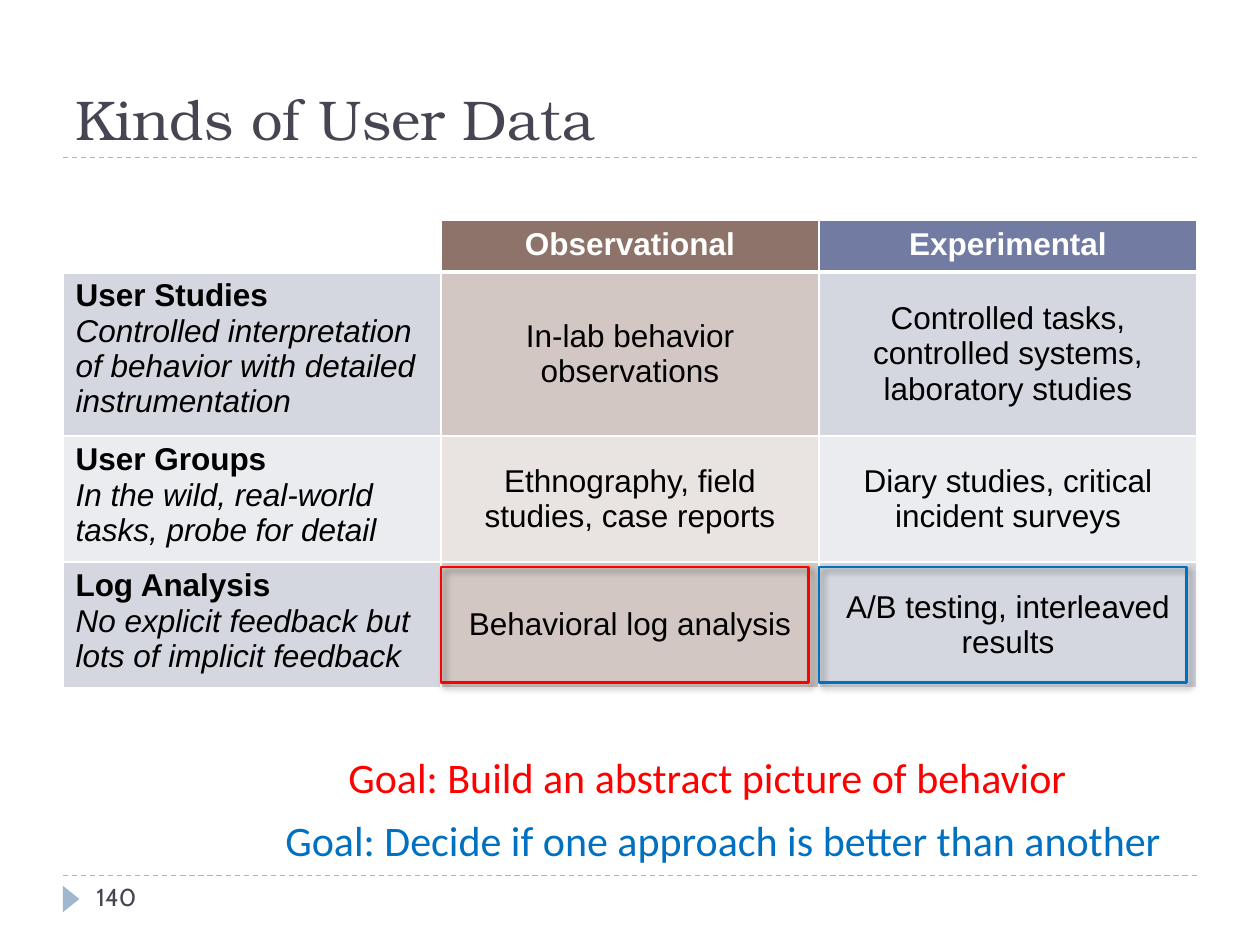
from lxml import etree
from pptx import Presentation
from pptx.dml.color import RGBColor
from pptx.enum import dml, shapes, text
from pptx.oxml import ns
from pptx.util import Pt

COLORS = {
    "ink": "464653", "rule": "9FB8CD", "white": "FFFFFF", "black": "000000",
    "red": "FF0000", "blue": "0070C0", "brown": "8E736A", "slate": "727CA3",
    "brown mid": "D2C7C3", "slate mid": "D5D7E0",
    "brown pale": "E9E3E1", "slate pale": "EBECF0",
}
TITLE = "Kinds of User Data"
PAGE_NUMBER = "140"
HEADERS = [("Observational", "brown"), ("Experimental", "slate")]
# name, description, observational, experimental, tint, height
ROWS = [
    ("User Studies", "Controlled interpretation of behavior with detailed instrumentation",
     "In-lab behavior observations",
     "Controlled tasks, controlled systems, laboratory studies", "mid", 93.6),
    ("User Groups", "In the wild, real-world tasks, probe for detail",
     "Ethnography, field studies, case reports",
     "Diary studies, critical incident surveys", "pale", 72),
    ("Log Analysis", "No explicit feedback but lots of implicit feedback",
     "Behavioral log analysis", "A/B testing, interleaved results", "mid", 72),
]
# goal, color, text box (left, top, width), left of its highlight
GOALS = [
    ("Goal: Build an abstract picture of behavior", "red", (192, 426, 432), 252),
    ("Goal: Decide if one approach is better than another", "blue", (156, 462, 528), 468),
]
HEADER_HEIGHT = 29.5
LEFT, WIDTH = 36, 648
RULE_TOPS = (90, 500.4)


def rgb(name):
    return RGBColor.from_string(COLORS[name])


def write(para, words, color, **formats):
    span = para.add_run()
    span.text = words
    span.font.color.rgb = rgb(color)
    for key, value in formats.items():
        setattr(span.font, key, value)


def add_text(page, frame, words, color, size, font, wrap=True, anchor=text.MSO_ANCHOR.TOP):
    box = page.shapes.add_textbox(*map(Pt, frame))
    box.text_frame.word_wrap = wrap
    box.text_frame.vertical_anchor = anchor
    write(box.text_frame.paragraphs[0], words, color, size=Pt(size), name=font)


def add_rule(page, top):
    rule = page.shapes.add_connector(
        shapes.MSO_CONNECTOR.STRAIGHT, Pt(LEFT), Pt(top), Pt(LEFT + WIDTH), Pt(top))
    rule.line.color.rgb = rgb("rule")
    rule.line.width = Pt(0.75)
    rule.line.dash_style = dml.MSO_LINE.DASH
    etree.SubElement(rule.element.spPr, ns.qn("a:effectLst"))


def add_marker(page):
    marker = page.shapes.add_shape(
        shapes.MSO_SHAPE.ISOSCELES_TRIANGLE, Pt(33.1), Pt(509), Pt(15.1), Pt(9.4))
    marker.rotation = 90
    marker.shadow.inherit = False
    marker.fill.solid()
    marker.fill.fore_color.rgb = rgb("rule")
    marker.line.fill.background()


def add_highlight(page, left, color):
    """Outline one table cell, with a soft shadow."""
    frame = page.shapes.add_shape(
        shapes.MSO_SHAPE.RECTANGLE, Pt(left), Pt(324), Pt(210), Pt(66))
    frame.fill.background()
    frame.line.color.rgb = rgb(color)
    frame.line.width = Pt(1.5)
    frame.shadow.inherit = False
    effects = frame.element.spPr.find(ns.qn("a:effectLst"))
    shadow = etree.SubElement(effects, ns.qn("a:outerShdw"), blurRad=str(Pt(4)),
                              dist=str(Pt(3)), dir="2700000", algn="tl", rotWithShape="0")
    tone = etree.SubElement(shadow, ns.qn("a:srgbClr"), val=COLORS["black"])
    etree.SubElement(tone, ns.qn("a:alpha"), val="40000")


def style_cell(cell, fill, top=1, bottom=1):
    """Set white borders, then the fill, which must follow them in the XML."""
    props = cell._tc.get_or_add_tcPr()
    for side, width in zip("LRTB", (1, 1, top, bottom)):
        edge = etree.SubElement(props, ns.qn(f"a:ln{side}"), w=str(Pt(width)))
        paint = etree.SubElement(edge, ns.qn("a:solidFill"))
        etree.SubElement(paint, ns.qn("a:srgbClr"), val=COLORS["white"])
    if fill:
        cell.fill.solid()
        cell.fill.fore_color.rgb = rgb(fill)
    else:
        cell.fill.background()


def write_centered(cell, words, color, **formats):
    para = cell.text_frame.paragraphs[0]
    para.alignment = text.PP_ALIGN.CENTER
    write(para, words, color, **formats)


def add_data_table(page):
    heights = [HEADER_HEIGHT] + [row[-1] for row in ROWS]
    table = page.shapes.add_table(
        len(heights), 3, Pt(LEFT), Pt(126), Pt(WIDTH), Pt(sum(heights))).table
    for row, height in zip(table.rows, heights):
        row.height = Pt(height)
    body = {"size": Pt(18), "name": "Arial", "bold": False}
    strong = {**body, "bold": True}

    style_cell(table.cell(0, 0), None, bottom=3)
    for column, (words, fill) in enumerate(HEADERS, 1):
        cell = table.cell(0, column)
        style_cell(cell, fill, bottom=3)
        write_centered(cell, words, "white", **strong)

    for index, (name, description, *examples, tint, _) in enumerate(ROWS, 1):
        top = 3 if index == 1 else 1
        cell = table.cell(index, 0)
        style_cell(cell, f"slate {tint}", top)
        write(cell.text_frame.paragraphs[0], name, "black", **strong)
        write(cell.text_frame.add_paragraph(), description, "black", italic=True, **body)
        for column, (words, (_, hue)) in enumerate(zip(examples, HEADERS), 1):
            cell = table.cell(index, column)
            style_cell(cell, f"{hue} {tint}", top)
            cell.vertical_anchor = text.MSO_ANCHOR.MIDDLE
            write_centered(cell, words, "black", **body)


def main():
    deck = Presentation()
    deck.slide_width, deck.slide_height = Pt(720), Pt(540)
    page = deck.slides.add_slide(deck.slide_layouts[6])
    for top in RULE_TOPS:
        add_rule(page, top)
    add_marker(page)
    add_text(page, (LEFT, 12, WIDTH, 78), TITLE, "ink", 32, "TeX Gyre Bonum",
             anchor=text.MSO_ANCHOR.BOTTOM)
    add_data_table(page)
    add_text(page, (48, 500.4, 156, 28.8), PAGE_NUMBER, "ink", 14, "Cabin")
    for words, color, place, highlight_left in GOALS:
        add_highlight(page, highlight_left, color)
        add_text(page, (*place, 36.4), words, color, 24, "Calibri", wrap=False)
    deck.save("out.pptx")


if __name__ == "__main__":
    main()
